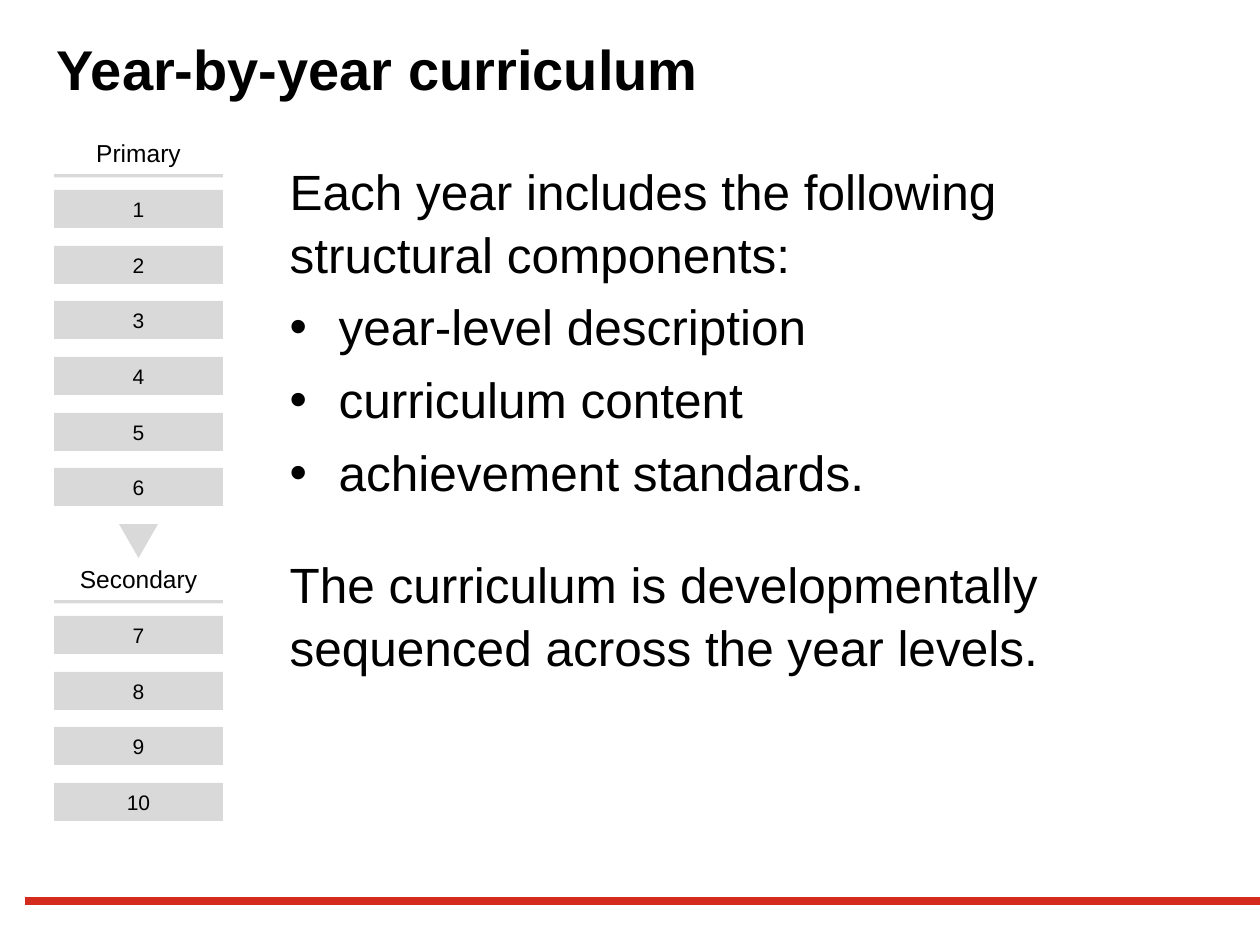
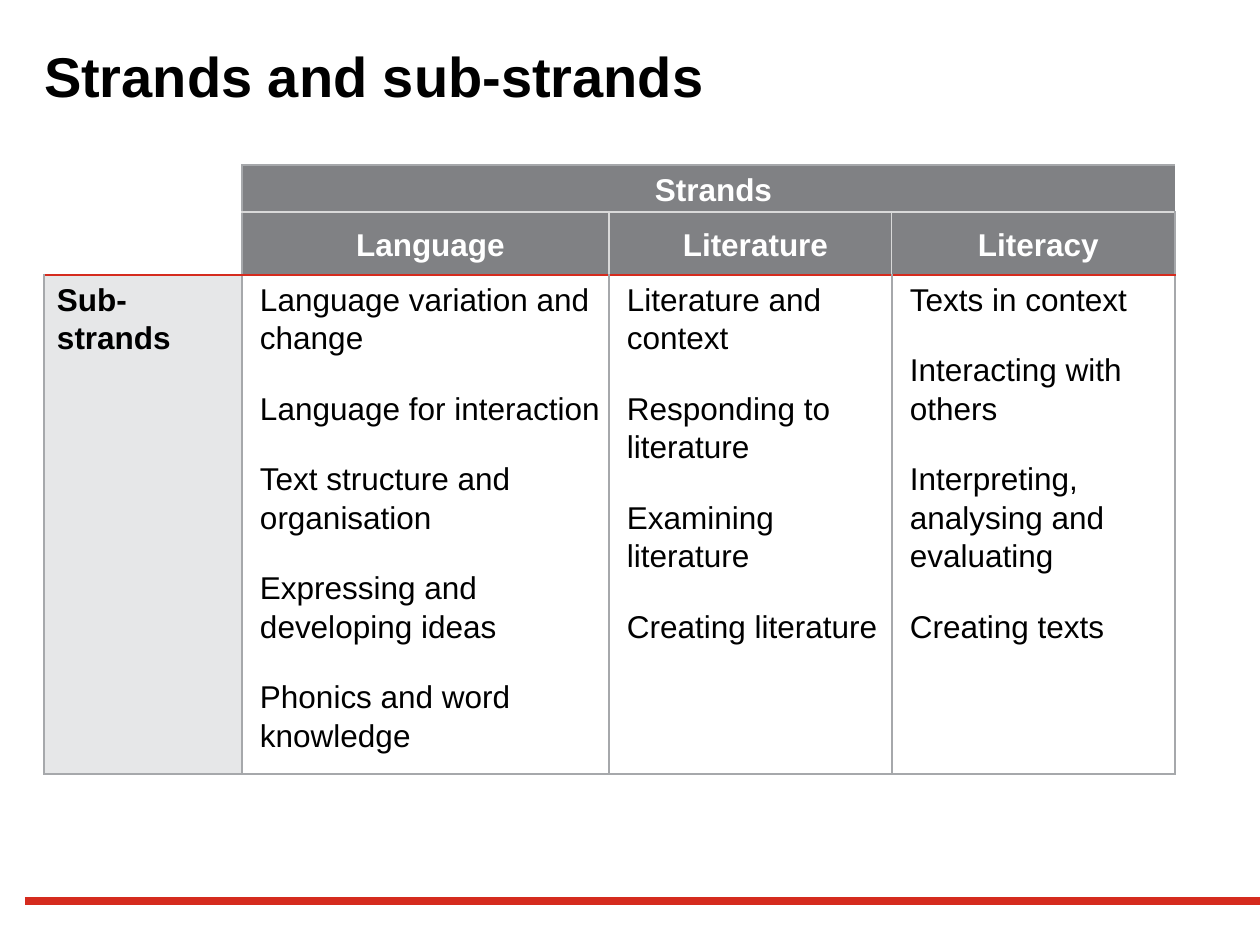
from lxml.etree import SubElement
from pptx import Presentation
from pptx.dml.color import RGBColor
from pptx.enum.shapes import MSO_CONNECTOR, MSO_SHAPE
from pptx.enum.text import MSO_ANCHOR, MSO_AUTO_SIZE, PP_ALIGN
from pptx.oxml import parse_xml
from pptx.oxml.ns import nsdecls, qn
from pptx.util import Emu, Pt

PIXELS_PER_INCH = 126
COLOURS = {
    "text": "000000", "white": "FFFFFF", "accent": "D52B1E", "year": "D9D9D9",
    "header": "808184", "side": "E6E7E8", "rule": "A6A8AB", "divider": "D9D9D9",
}
FONT = "Arial"
TITLE_LAYOUT, LIST_LAYOUT = 5, 1
TITLE_BOX = (44, 35, 1171, 60)

# Year column on the first slide
COLUMN_LEFT, COLUMN_WIDTH = 54, 169
YEAR_HEIGHT, YEAR_PITCH = 38, 55.7
STAGES = [("Primary", 131, range(1, 7)), ("Secondary", 557, range(7, 11))]
STAGE_HEIGHT, FIRST_YEAR_OFFSET = 43, 59

INTRODUCTION = "Each year includes the following structural components:"
COMPONENTS = ["year-level description", "curriculum content", "achievement standards."]
CONCLUSION = "The curriculum is developmentally sequenced across the year levels."

# Strands table on the second slide
STRANDS = {
    "Language": ["Language variation and change", "Language for interaction",
                 "Text structure and organisation", "Expressing and developing ideas",
                 "Phonics and word knowledge"],
    "Literature": ["Literature and context", "Responding to literature",
                   "Examining literature", "Creating literature"],
    "Literacy": ["Texts in context", "Interacting with others",
                 "Interpreting, analysing and evaluating", "Creating texts"],
}
TABLE_COLUMNS = [198, 367, 283, 283]
TABLE_ROWS = [47, 63, 499]
HEADER_MARGINS = (8, 4, 8, 4)
SIDE_MARGINS = (3, 4, 6, 4)
LIST_MARGINS = (8, 4, 8, 20)
CELL_INDENT = 10


def px(length):
    return Emu(round(length * 914400 / PIXELS_PER_INCH))


def colour(name):
    return RGBColor.from_string(COLOURS[name])


def set_attributes(target, values):
    for name, value in values.items():
        setattr(target, name, value)


def place(shape, box):
    set_attributes(shape, dict(zip(("left", "top", "width", "height"), map(px, box))))


def set_margins(target, margins):
    names = ("margin_left", "margin_top", "margin_right", "margin_bottom")
    set_attributes(target, dict(zip(names, map(px, margins))))


def write_paragraph(paragraph, text, size, ink="text", bold=False, **layout):
    run = paragraph.add_run()
    run.text = text
    set_attributes(run.font, {"size": Pt(size), "name": FONT, "bold": bold})
    run.font.color.rgb = colour(ink)
    set_attributes(paragraph, layout)


def next_paragraph(text_frame, index):
    return text_frame.paragraphs[0] if index == 0 else text_frame.add_paragraph()


def set_indent(paragraph, left, first_line=0):
    properties = paragraph._p.get_or_add_pPr()
    properties.set("marL", str(px(left)))
    properties.set("indent", str(px(first_line)))
    return properties


def add_footer_line(slide):
    line = slide.shapes.add_connector(MSO_CONNECTOR.STRAIGHT, px(25), px(901), px(1260), px(901))
    line.line.color.rgb = colour("accent")
    line.line.width = Pt(4.2)
    SubElement(line._element.spPr, qn("a:effectLst"))


def add_titled_slide(presentation, layout, title, anchor):
    slide = presentation.slides.add_slide(presentation.slide_layouts[layout])
    add_footer_line(slide)
    place(slide.shapes.title, TITLE_BOX)
    frame = slide.shapes.title.text_frame
    set_attributes(frame, {"auto_size": MSO_AUTO_SIZE.NONE, "vertical_anchor": anchor,
                           "word_wrap": True})
    write_paragraph(frame.paragraphs[0], title, 32, bold=True,
                    alignment=PP_ALIGN.LEFT, line_spacing=1.1)
    return slide


def add_block(slide, kind, box, fill):
    shape = slide.shapes.add_shape(kind, *map(px, box))
    shape.shadow.inherit = False
    shape.fill.solid()
    shape.fill.fore_color.rgb = colour(fill)
    shape.line.fill.background()
    return shape


def add_label(slide, top, height, text, size, fill):
    box = (COLUMN_LEFT, top, COLUMN_WIDTH, height)
    label = add_block(slide, MSO_SHAPE.RECTANGLE, box, fill)
    label.text_frame.vertical_anchor = MSO_ANCHOR.MIDDLE
    write_paragraph(label.text_frame.paragraphs[0], text, size, alignment=PP_ALIGN.CENTER)
    return label


def add_under_shadow(shape):
    effects = shape._element.spPr.find(qn("a:effectLst"))
    effects.append(parse_xml(
        f'<a:outerShdw {nsdecls("a")} blurRad="0" dist="{Pt(2)}" dir="5400000" rotWithShape="0">'
        f'<a:srgbClr val="{COLOURS["text"]}"><a:alpha val="15000"/></a:srgbClr></a:outerShdw>'))


def add_stage(slide, name, top, years):
    add_under_shadow(add_label(slide, top, STAGE_HEIGHT, name, 14, "white"))
    for index, year in enumerate(years):
        year_top = round(top + FIRST_YEAR_OFFSET + index * YEAR_PITCH)
        add_label(slide, year_top, YEAR_HEIGHT, str(year), 12, "year")


def add_component_list(slide):
    body = slide.placeholders[1]
    place(body, (277, 152, 919, 688))
    frame = body.text_frame
    frame.auto_size = MSO_AUTO_SIZE.NONE
    for index, text in enumerate([INTRODUCTION, *COMPONENTS, CONCLUSION]):
        paragraph = next_paragraph(frame, index)
        gap = 28.5 if text == CONCLUSION else 6
        write_paragraph(paragraph, text, 28.3, space_before=Pt(gap), line_spacing=1.05)
        if text in COMPONENTS:
            bullet = SubElement(set_indent(paragraph, 49, -49), qn("a:buChar"))
            bullet.set("char", "•")
        else:
            SubElement(set_indent(paragraph, 0), qn("a:buNone"))


def horizontal_edge(edge, column):
    if column == 0 and edge == 0:
        return None
    if edge == 2 or (column == 0 and edge == 1):
        return "accent", 1.5
    return ("divider", 1) if edge == 1 else ("rule", 1)


def vertical_edge(edge, row):
    if row == 2 or edge in (1, 4):
        return None if edge == 0 and row < 2 else ("rule", 1)
    return ("divider", 0.75) if row == 1 and edge else None


def set_borders(cell, row, column):
    edges = {
        "lnL": vertical_edge(column, row), "lnR": vertical_edge(column + 1, row),
        "lnT": horizontal_edge(row, column), "lnB": horizontal_edge(row + 1, column),
    }
    properties = cell._tc.get_or_add_tcPr()
    for index, (tag, edge) in enumerate(edges.items()):
        name, width = edge or ("white", 0)
        paint = f'<a:solidFill><a:srgbClr val="{COLOURS[name]}"/></a:solidFill>'
        properties.insert(index, parse_xml(
            f'<a:{tag} {nsdecls("a")} w="{Pt(width)}">{paint if edge else "<a:noFill/>"}</a:{tag}>'))


def fill_cell(cell, texts, margins, anchor=MSO_ANCHOR.TOP, ink="text", bold=False, **layout):
    set_margins(cell, margins)
    cell.vertical_anchor = anchor
    for index, text in enumerate(texts):
        paragraph = next_paragraph(cell.text_frame, index)
        write_paragraph(paragraph, text, 18, ink, bold, line_spacing=1.1, **layout)
        set_indent(paragraph, CELL_INDENT)


def add_strands_table(slide):
    frame = slide.shapes.add_table(len(TABLE_ROWS), len(TABLE_COLUMNS), px(44), px(165),
                                   px(sum(TABLE_COLUMNS)), px(sum(TABLE_ROWS)))
    table = frame.table
    set_attributes(table, {"first_row": False, "horz_banding": False})
    for column, width in zip(table.columns, TABLE_COLUMNS):
        column.width = px(width)
    for row, height in zip(table.rows, TABLE_ROWS):
        row.height = px(height)

    # Fills and borders
    for row in range(len(TABLE_ROWS)):
        for column in range(len(TABLE_COLUMNS)):
            cell = table.cell(row, column)
            cell.fill.solid()
            if row < 2:
                fill = "header" if column else "white"
            else:
                fill = "white" if column else "side"
            cell.fill.fore_color.rgb = colour(fill)
            set_borders(cell, row, column)
    table.cell(0, 0).merge(table.cell(1, 0))
    table.cell(0, 1).merge(table.cell(0, 3))

    # Wording
    header = {"margins": HEADER_MARGINS, "anchor": MSO_ANCHOR.MIDDLE, "ink": "white",
              "bold": True, "alignment": PP_ALIGN.CENTER}
    fill_cell(table.cell(0, 1), ["Strands"], **header)
    fill_cell(table.cell(2, 0), ["Sub-strands"], SIDE_MARGINS, bold=True)
    for column, (strand, sub_strands) in enumerate(STRANDS.items(), start=1):
        fill_cell(table.cell(1, column), [strand], **header)
        fill_cell(table.cell(2, column), sub_strands, LIST_MARGINS, space_after=Pt(18))


def build_curriculum_slide(presentation):
    slide = add_titled_slide(presentation, LIST_LAYOUT, "Year-by-year curriculum",
                             MSO_ANCHOR.MIDDLE)
    add_component_list(slide)
    for stage in STAGES:
        add_stage(slide, *stage)
    arrow = add_block(slide, MSO_SHAPE.ISOSCELES_TRIANGLE, (119, 524, 39, 34), "year")
    arrow.rotation = 180


def build_strands_slide(presentation):
    slide = add_titled_slide(presentation, TITLE_LAYOUT, "Strands and sub-strands",
                             MSO_ANCHOR.TOP)
    set_margins(slide.shapes.title.text_frame, (0, 0, 0, 0))
    add_strands_table(slide)


def main():
    presentation = Presentation()
    set_attributes(presentation, {"slide_width": px(1260), "slide_height": px(945)})
    build_curriculum_slide(presentation)
    build_strands_slide(presentation)
    presentation.save("out.pptx")


if __name__ == "__main__":
    main()
